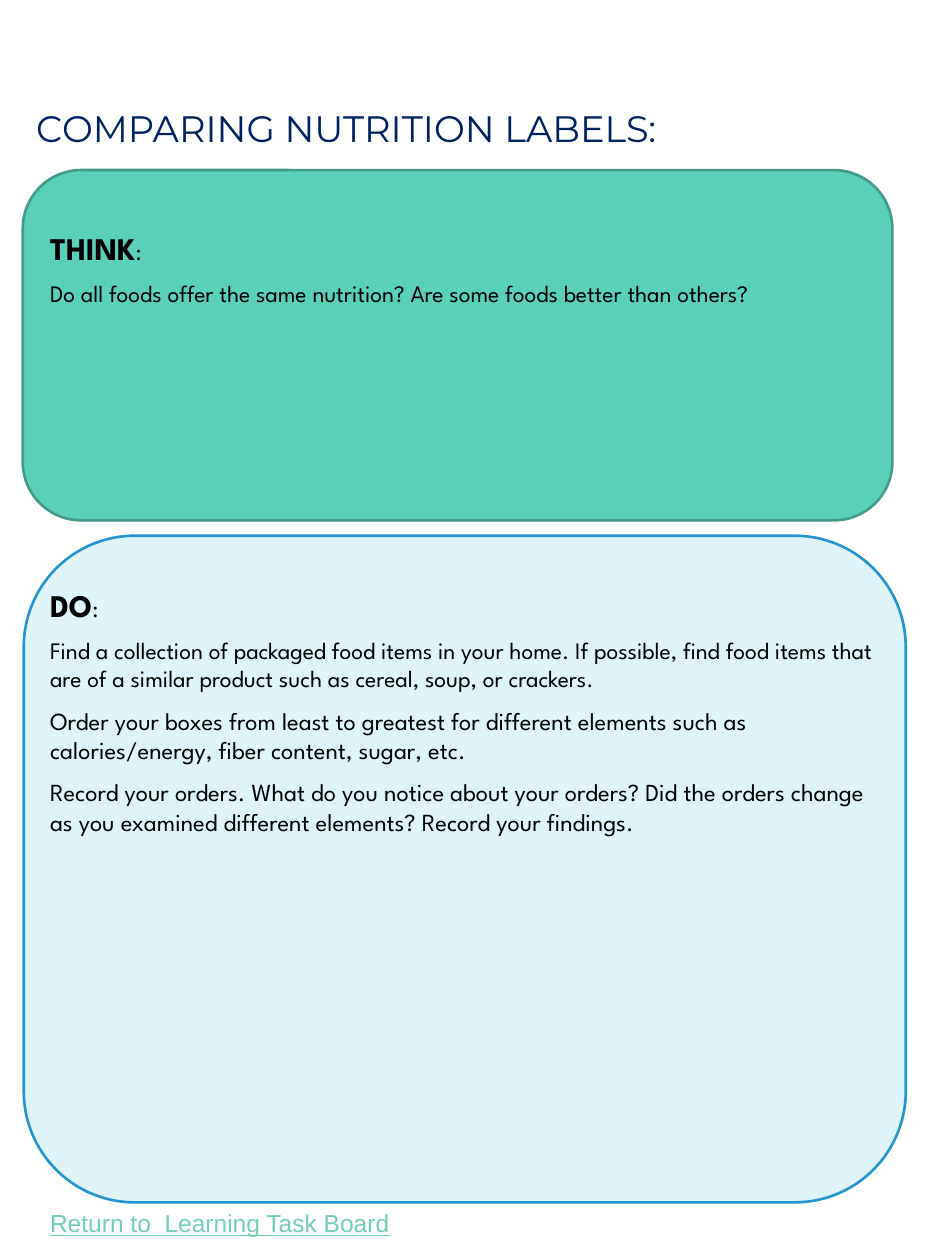
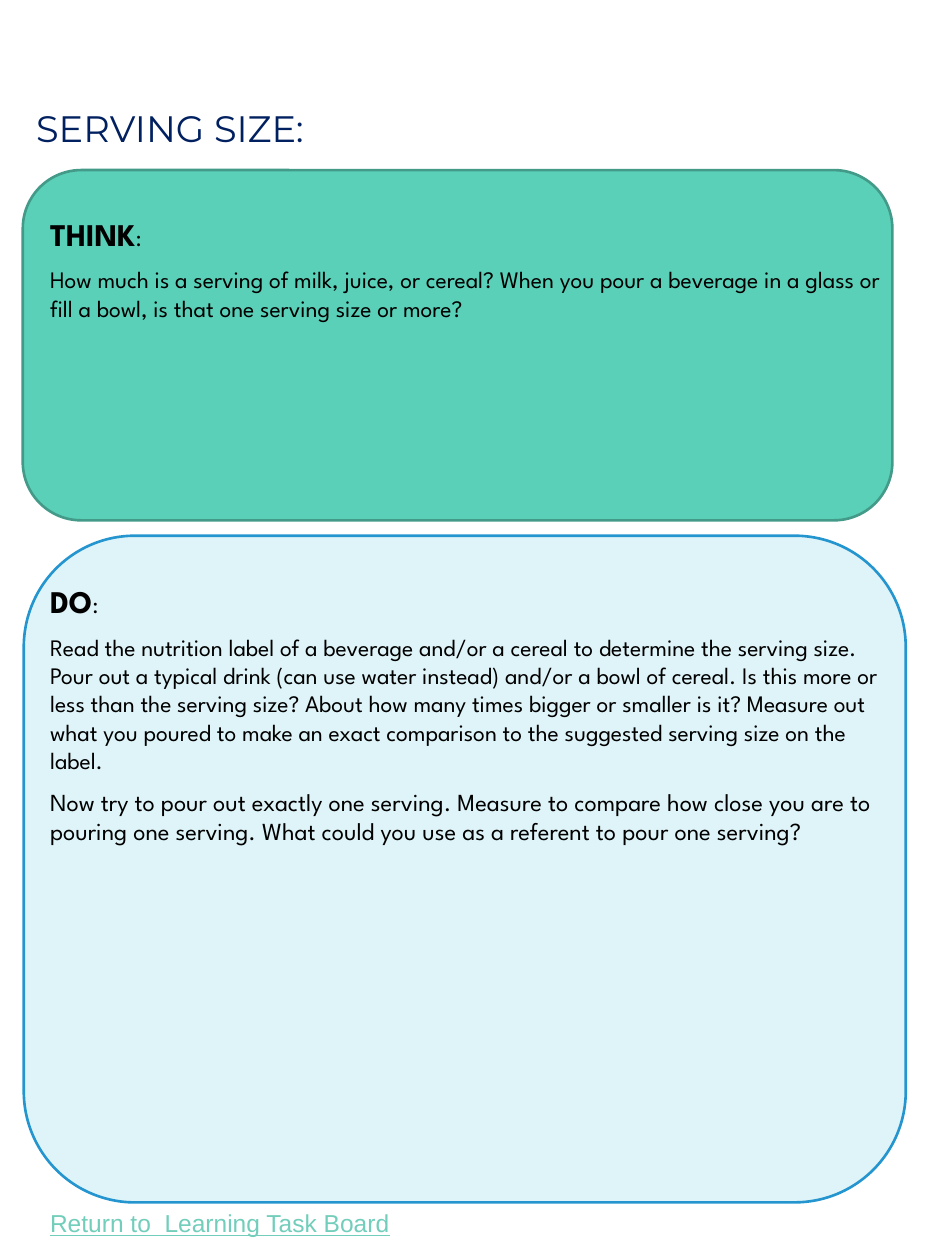
from dataclasses import dataclass

from lxml import etree
from pptx import Presentation
from pptx.dml.color import RGBColor
from pptx.enum.shapes import MSO_SHAPE
from pptx.enum.text import MSO_ANCHOR
from pptx.oxml import parse_xml
from pptx.oxml.ns import qn
from pptx.util import Cm, Pt

ROUNDED = MSO_SHAPE.ROUNDED_RECTANGLE
TOP, MIDDLE = MSO_ANCHOR.TOP, MSO_ANCHOR.MIDDLE

SOFT_SHADOW = (
    '<a:effectLst xmlns:a="http://schemas.openxmlformats.org/drawingml/2006/main">'
    '<a:outerShdw blurRad="38100" dist="38100" dir="2700000" algn="tl">'
    '<a:srgbClr val="000000"><a:alpha val="43137"/></a:srgbClr>'
    '</a:outerShdw></a:effectLst>'
)


@dataclass(frozen=True)
class Theme:
    navy: str = "002060"
    ink: str = "000000"
    link: str = "72CEBB"
    think_fill: str = "5AD0B8"
    think_line: str = "439A88"
    do_fill: str = "DFF4F8"
    do_line: str = "2495CF"
    title_font: str = "Montserrat"
    body_font: str = "League Spartan"
    footer_font: str = "Arial"
    title_size: float = 21
    heading_size: float = 18
    body_size: float = 13.5
    step_size: float = 14
    space_before: float = 0.2  # share of the type size
    space_after: float = 4.5
    outline: float = 1.5


# Shared positions in cm: left, top, width, height
TITLE_AREA = (0.48, 0.97, 18.08, 3.23)
THINK_CARD = (0.46, 3.43, 17.53, 7.06)
DO_CARD = (0.48, 10.8, 17.78, 13.44)
FOOTER_AREA = (0.76, 24.23, 7.92, 0.86)
TEXT_LEFT, TEXT_WIDTH = 0.76, 17.5
THINK_TEXT_HEIGHT = 3.96

FOOTER = "Return to  Learning Task Board"

TASKS = [
    {
        "title": "COMPARING NUTRITION LABELS:",
        "think": "Do all foods offer the same nutrition? Are some foods better than others?",
        "do": [
            "Find a collection of packaged food items in your home. If possible, find food "
            "items that are of a similar product such as cereal, soup, or crackers.",
            "Order your boxes from least to greatest for different elements such as "
            "calories/energy, fiber content, sugar, etc.",
            "Record your orders. What do you notice about your orders? Did the orders change "
            "as you examined different elements? Record your findings.",
        ],
        "do_height": 7.06,
    },
    {
        "title": "SERVING SIZE:",
        "think": "How much is a serving of milk, juice, or cereal? When you pour a beverage "
                 "in a glass or fill a bowl, is that one serving size or more?",
        "do": [
            "Read the nutrition label of a beverage and/or a cereal to determine the serving "
            "size. Pour out a typical drink (can use water instead) and/or a bowl of cereal. "
            "Is this more or less than the serving size? About how many times bigger or "
            "smaller is it? Measure out what you poured to make an exact comparison to the "
            "suggested serving size on the label.",
            "Now try to pour out exactly one serving. Measure to compare how close you are to "
            "pouring one serving. What could you use as a referent to pour one serving?",
        ],
        "do_height": 7.19,
    },
]


def write(paragraph, text, *, font, size, color, bold=False, underline=False, shadow=False):
    """Append one formatted run to a paragraph."""
    run = paragraph.add_run()
    run.text = text
    run.font.name = font
    run.font.size = Pt(size)
    run.font.bold = bold
    run.font.underline = underline
    run.font.color.rgb = RGBColor.from_string(color)
    if shadow:
        fill = run.font._element.find(qn("a:solidFill"))
        fill.addnext(parse_xml(SOFT_SHADOW))


class TaskBoard:
    """Holds the theme and the current slide."""

    def __init__(self, deck, theme):
        self.deck = deck
        self.theme = theme
        self.slide = None

    def new_slide(self):
        self.slide = self.deck.slides.add_slide(self.deck.slide_layouts[6])

    def frame(self, area, anchor):
        text_frame = self.slide.shapes.add_textbox(*map(Cm, area)).text_frame
        text_frame.word_wrap = True
        text_frame.vertical_anchor = anchor
        return text_frame

    def title(self, text):
        t = self.theme
        write(self.frame(TITLE_AREA, MIDDLE).paragraphs[0], text,
              font=t.title_font, size=t.title_size, color=t.navy)

    def footer(self, text):
        t = self.theme
        write(self.frame(FOOTER_AREA, TOP).paragraphs[0], text,
              font=t.footer_font, size=t.step_size, color=t.link, underline=True)

    def card(self, area, fill, line):
        card = self.slide.shapes.add_shape(ROUNDED, *map(Cm, area))
        card.shadow.inherit = False
        card.fill.solid()
        card.fill.fore_color.rgb = RGBColor.from_string(fill)
        card.line.color.rgb = RGBColor.from_string(line)
        card.line.width = Pt(self.theme.outline)

    def space(self, paragraph, size):
        paragraph.space_before = Pt(size * self.theme.space_before)
        paragraph.space_after = Pt(self.theme.space_after)

    def prompt(self, top, height, heading, texts):
        """Heading with a light colon, then the text; later steps are slightly larger."""
        t = self.theme
        style = {"font": t.body_font, "color": t.ink}
        frame = self.frame((TEXT_LEFT, top, TEXT_WIDTH, height), MIDDLE)
        first = frame.paragraphs[0]
        self.space(first, t.heading_size)
        write(first, heading, size=t.heading_size, bold=True, **style)
        write(first, ":", size=t.body_size, **style)
        for number, text in enumerate(texts):
            size = t.step_size if number else t.body_size
            step = frame.add_paragraph()
            self.space(step, size)
            write(step, text, size=size, shadow=True, **style)


def main():
    deck = Presentation()
    deck.slide_width, deck.slide_height = Cm(19.05), Cm(25.4)
    theme = Theme()
    board = TaskBoard(deck, theme)

    for task in TASKS:
        board.new_slide()
        board.title(task["title"])
        board.footer(FOOTER)

        # Think
        board.card(THINK_CARD, theme.think_fill, theme.think_line)
        board.prompt(THINK_CARD[1], THINK_TEXT_HEIGHT, "THINK", [task["think"]])

        # Do
        board.card(DO_CARD, theme.do_fill, theme.do_line)
        board.prompt(DO_CARD[1], task["do_height"], "DO", task["do"])

    deck.save("out.pptx")


if __name__ == "__main__":
    main()
